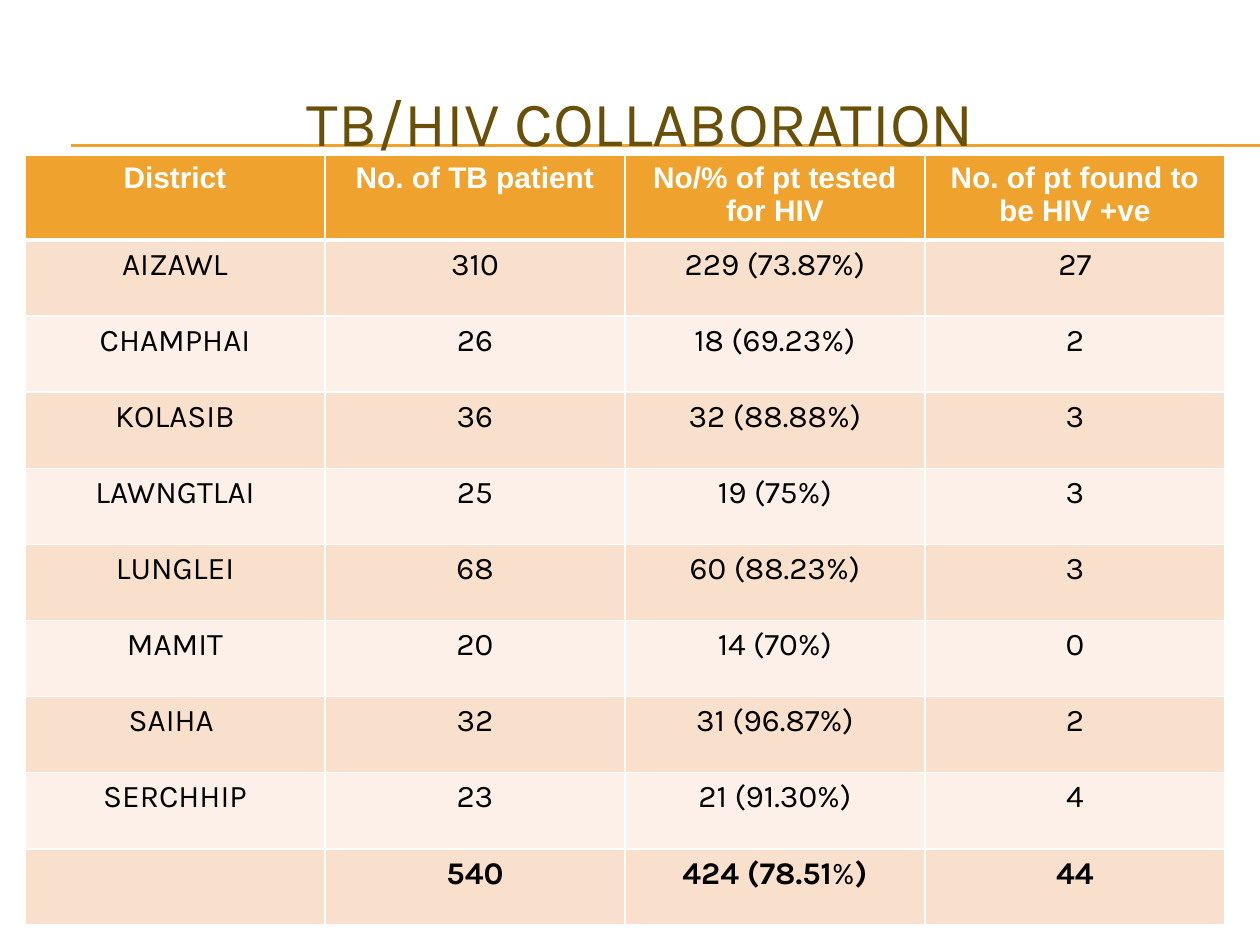
import pptx
import pptx.dml.color
import pptx.enum.text
import pptx.oxml
import pptx.oxml.ns
import pptx.util

SCALE = 914400 / 126
HUES = {"gold": "F0A22E", "brown": "695008", "white": "FFFFFF",
        "black": "000000", "peach": "F9E0CD", "cream": "FCF0E8"}
HEADS = ["District", "No. of TB patient", "No/% of pt tested for HIV",
         "No. of pt found to be HIV +ve"]
ROWS = [
    ["AIZAWL", "310", "229 (73.87%)", "27"],
    ["CHAMPHAI", "26", "18 (69.23%)", "2"],
    ["KOLASIB", "36", "32 (88.88%)", "3"],
    ["LAWNGTLAI", "25", "19 (75%)", "3"],
    ["LUNGLEI", "68", "60 (88.23%)", "3"],
    ["MAMIT", "20", "14 (70%)", "0"],
    ["SAIHA ", "32", "31 (96.87%)", "2"],
    ["SERCHHIP", "23", "21 (91.30%)", "4"],
]
TOTALS = [[], [("540", True)],
          [("424 (78.51", True), ("%", False), (")", True)], [("44", True)]]


def px(num):
    return pptx.util.Emu(round(num * SCALE))


def color(name):
    return pptx.dml.color.RGBColor.from_string(HUES[name])


def write(frame, text, size=18, font="Karla", hue="black", bold=False):
    para = frame.paragraphs[0]
    para.alignment = pptx.enum.text.PP_ALIGN.CENTER
    for part, heavy in [(text, bold)] if isinstance(text, str) else text:
        run = para.add_run()
        run.text = part
        run.font.size = pptx.util.Pt(size)
        run.font.name = font
        run.font.bold = heavy
        run.font.color.rgb = color(hue)


def edge(cell, base):
    props = cell._tc.get_or_add_tcPr()
    widths = {"lnL": 1, "lnR": 1, "lnT": 1, "lnB": base}
    for spot, (tag, width) in enumerate(widths.items()):
        line = pptx.oxml.parse_xml(
            f'<a:{tag} {pptx.oxml.ns.nsdecls("a")} w="{pptx.util.Pt(width)}">'
            f'<a:solidFill><a:srgbClr val="{HUES["white"]}"/></a:solidFill>'
            f'</a:{tag}>')
        props.insert(spot, line)


def rule(slide, left, top, right):
    line = slide.shapes.add_connector(
        pptx.enum.shapes.MSO_CONNECTOR.STRAIGHT,
        px(left), px(top), px(right), px(top))
    line.line.color.rgb = color("gold")
    line.line.width = pptx.util.Pt(0.75)
    line.element.spPr.append(pptx.oxml.parse_xml(
        f'<a:effectLst {pptx.oxml.ns.nsdecls("a")}/>'))


def header(slide, left, top, width, height):
    for gap in (82, 83):
        rule(slide, left + 29, top + gap, 1260)
    title = slide.shapes.title
    title.left, title.top = px(left), px(top)
    title.width, title.height = px(width), px(height)
    title.text_frame.vertical_anchor = pptx.enum.text.MSO_ANCHOR.MIDDLE
    write(title.text_frame, "TB/HIV COLLABORATION", size=36, hue="brown")
    title.element.getparent().append(title.element)


def grid(slide, left, top, width, height):
    data = [HEADS, *ROWS, TOTALS]
    table = slide.shapes.add_table(
        len(data), len(HEADS), px(left), px(top), px(width), px(height)).table
    for col in table.columns:
        col.width = px(width / len(HEADS))
    head = 85
    for num, texts in enumerate(data):
        first = num == 0
        table.rows[num].height = px(
            head if first else (height - head) / (len(data) - 1))
        fill = "gold" if first else "peach" if num % 2 else "cream"
        style = (dict(size=17, font="Arial", hue="white", bold=True)
                 if first else {})
        for cell, text in zip(table.rows[num].cells, texts):
            cell.fill.solid()
            cell.fill.fore_color.rgb = color(fill)
            edge(cell, 3 if first else 1)
            write(cell.text_frame, text, **style)


def main():
    deck = pptx.Presentation()
    deck.slide_width, deck.slide_height = px(1260), px(945)
    slide = deck.slides.add_slide(deck.slide_layouts[5])
    header(slide, 42, 63, 1197, 116)
    grid(slide, 25, 155, 1200, 770)
    deck.save("out.pptx")


if __name__ == "__main__":
    main()
